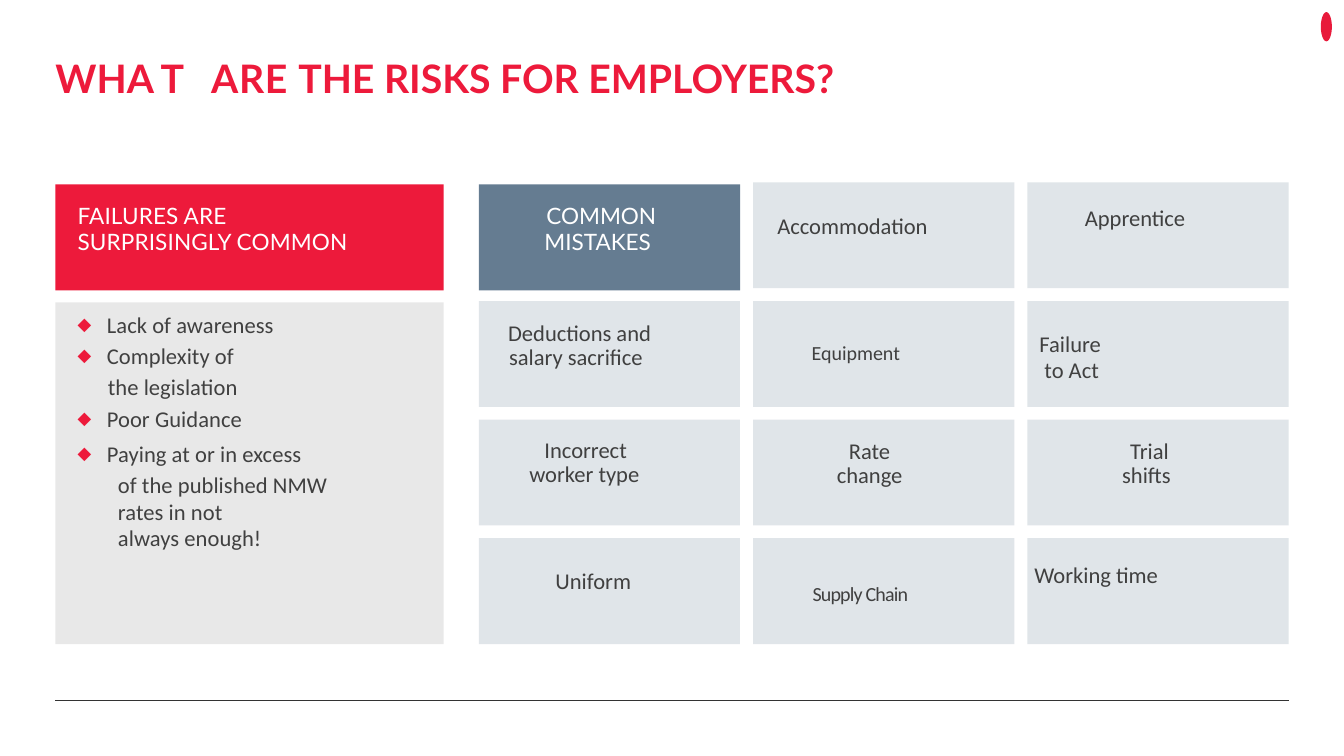
from dataclasses import dataclass

from lxml.etree import SubElement
from pptx import Presentation
from pptx.dml.color import RGBColor
from pptx.enum.shapes import MSO_CONNECTOR as Connector, MSO_SHAPE as Preset
from pptx.enum.text import MSO_ANCHOR as Anchor, MSO_AUTO_SIZE as AutoSize, PP_ALIGN as Align
from pptx.oxml.ns import qn
from pptx.util import Inches, Pt

RED, SLATE, PALE, GREY = "ED1A3B", "657C91", "E0E5E9", "E8E8E8"
WHITE, INK, RULE = "FFFFFF", "404040", "333333"

LEFT, RIGHT, BOTTOM = 0.55, 12.78, 6.39
PANEL_W, HEADER_TOP, LIST_TOP = 3.85, 1.83, 3.0
GRID_LEFT, GRID_TOP, CELL_W, CELL_H = 4.75, 1.81, 2.59, 1.05
COLUMN_STEP = (RIGHT - GRID_LEFT - CELL_W) / 2
ROW_STEP = (BOTTOM - GRID_TOP - CELL_H) / 3


@dataclass(frozen=True)
class Mistake:
    """One grid cell; dx and dy place its text inside the cell, indents shift single lines."""
    column: int
    row: int
    lines: tuple[str, ...]
    dx: float
    dy: float
    indents: tuple[float, ...] = (0, 0)
    size: float = 16.1
    pitch: float = 17
    spacing: float = 0

    @property
    def left(self) -> float:
        return GRID_LEFT + self.column * COLUMN_STEP

    @property
    def top(self) -> float:
        return GRID_TOP + self.row * ROW_STEP


@dataclass(frozen=True)
class Reason:
    """One line of the list; lines without a bullet continue the one above."""
    words: str
    indent: float
    pitch: float = 22.4
    bullet: bool = True


MISTAKES = [
    Mistake(1, 0, ("Accommodation",), 0.24, 0.29),
    Mistake(2, 0, ("Apprentice",), 0.57, 0.21),
    Mistake(0, 1, ("Deductions and", "salary sacrifice"), 0.29, 0.18, (0, 0.01)),
    Mistake(1, 1, ("Equipment",), 0.58, 0.39, size=14.3),
    Mistake(2, 1, ("Failure", "to Act"), 0.12, 0.29, (0, 0.05), pitch=18.6),
    Mistake(0, 2, ("Incorrect", "worker type"), 0.5, 0.16, (0.15, 0)),
    Mistake(1, 2, ("Rate", "change"), 0.83, 0.17, (0.12, 0)),
    Mistake(2, 2, ("Trial", "shifts"), 0.94, 0.17, (0.08, 0)),
    Mistake(0, 3, ("Uniform",), 0.76, 0.29),
    Mistake(1, 3, ("Supply Chain",), 0.59, 0.43, size=14.3, spacing=-0.6),
    Mistake(2, 3, ("Working time",), 0.07, 0.23),
]

REASONS = [
    Reason("Lack of awareness", 0.29),
    Reason("Complexity of", 0.29),
    Reason("the legislation", 0.3, bullet=False),
    Reason("Poor Guidance", 0.29),
    Reason("Paying at or in excess", 0.29, pitch=25),
    Reason("of the published NMW", 0.4, bullet=False),
    Reason("rates in not", 0.4, pitch=19, bullet=False),
    Reason("always enough!", 0.4, pitch=19, bullet=False),
]


def colour(code: str) -> RGBColor:
    return RGBColor.from_string(code)


def place(shape, left: float, top: float, width: float, height: float) -> None:
    shape.left, shape.top = Inches(left), Inches(top)
    shape.width, shape.height = Inches(width), Inches(height)


def clear_frame(shape):
    """Strip margins and fitting from a shape's text frame and return the frame."""
    frame = shape.text_frame
    frame.margin_left = frame.margin_right = frame.margin_top = frame.margin_bottom = 0
    frame.word_wrap = True
    frame.auto_size = AutoSize.NONE
    frame.vertical_anchor = Anchor.TOP
    return frame


def line_of(frame, index: int):
    return frame.paragraphs[0] if index == 0 else frame.add_paragraph()


def write(paragraph, words: str, *, font: str = "Calibri", size: float = 16.1,
          code: str = INK, bold: bool = False, spacing: float = 0) -> None:
    run = paragraph.add_run()
    run.text = words
    run.font.name, run.font.size, run.font.bold = font, Pt(size), bold
    run.font.color.rgb = colour(code)
    if spacing:
        run.font._element.set("spc", str(round(spacing * 100)))


def set_indent(paragraph, margin: float, hanging: float = 0):
    properties = paragraph._p.get_or_add_pPr()
    properties.set("marL", str(Inches(margin)))
    properties.set("indent", str(-Inches(hanging)))
    return properties


def paint(shape, fill: str) -> None:
    shape.shadow.inherit = False
    shape.fill.solid()
    shape.fill.fore_color.rgb = colour(fill)
    shape.line.fill.background()


def add_block(slide, left: float, top: float, width: float, height: float,
              fill: str, preset=Preset.RECTANGLE):
    block = slide.shapes.add_shape(preset, 0, 0, 0, 0)
    place(block, left, top, width, height)
    paint(block, fill)
    return block


def add_label(slide, left: float, top: float, lines: tuple[str, ...], *,
              indents: tuple[float, ...] = (0, 0), pitch: float = 19.1,
              width: float = 2, **style) -> None:
    label = slide.shapes.add_textbox(0, 0, 0, 0)
    place(label, left, top, width, 0.27 * len(lines))
    frame = clear_frame(label)
    for index, words in enumerate(lines):
        paragraph = line_of(frame, index)
        set_indent(paragraph, indents[index])
        if index:
            paragraph.line_spacing = Pt(pitch)
        write(paragraph, words, **style)


def add_mistake_grid(slide) -> None:
    """Draw all cells as one outline, then the text of each."""
    first = MISTAKES[0]
    outline = slide.shapes.build_freeform(Inches(first.left), Inches(first.top))
    for mistake in MISTAKES:
        left, top = Inches(mistake.left), Inches(mistake.top)
        right, bottom = left + Inches(CELL_W), top + Inches(CELL_H)
        if mistake is not first:
            outline.move_to(left, top)
        outline.add_line_segments([(right, top), (right, bottom), (left, bottom)], close=True)
    paint(outline.convert_to_shape(), PALE)
    for mistake in MISTAKES:
        add_label(slide, mistake.left + mistake.dx, mistake.top + mistake.dy, mistake.lines,
                  indents=mistake.indents, pitch=mistake.pitch,
                  size=mistake.size, spacing=mistake.spacing)


def fill_title(title) -> None:
    place(title, LEFT, 0.63, RIGHT - LEFT, 0.35)
    heading = clear_frame(title).paragraphs[0]
    heading.alignment, heading.line_spacing = Align.LEFT, 0.8
    for words, spacing in (("WH", 0), ("AT ", 6.7), ("ARE ", 0.5), ("THE RISKS FOR EMPLOYERS?", 0)):
        write(heading, words, font="Lato", size=28, code=RED, bold=True, spacing=spacing)


def fill_reasons(body) -> None:
    place(body, 0.77, 3.04, 3.4, 2.5)
    frame = clear_frame(body)
    for index, reason in enumerate(REASONS):
        paragraph = line_of(frame, index)
        properties = set_indent(paragraph, reason.indent, reason.indent if reason.bullet else 0)
        paragraph.line_spacing, paragraph.space_before = Pt(reason.pitch), Pt(0)
        if reason.bullet:
            SubElement(SubElement(properties, qn("a:buClr")), qn("a:srgbClr"), val=RED)
            SubElement(properties, qn("a:buSzPct"), val="79000")
            SubElement(properties, qn("a:buFont"), typeface="Roboto")
            SubElement(properties, qn("a:buChar"), char="◆")
        else:
            SubElement(properties, qn("a:buNone"))
        write(paragraph, reason.words, spacing=0.05)


def add_footer_rule(slide) -> None:
    rule = slide.shapes.add_connector(Connector.STRAIGHT, Inches(LEFT), Inches(6.95),
                                      Inches(RIGHT), Inches(6.95))
    rule.line.color.rgb, rule.line.width = colour(RULE), Pt(0.5)
    SubElement(rule._element.spPr, qn("a:effectLst"))


def main() -> None:
    deck = Presentation()
    deck.slide_width, deck.slide_height = Inches(13.33), Inches(7.5)
    slide = deck.slides.add_slide(deck.slide_layouts[1])
    title, body = slide.placeholders
    fill_title(title)
    add_footer_rule(slide)
    add_block(slide, LEFT, HEADER_TOP, PANEL_W, CELL_H, RED)
    add_label(slide, 0.77, 2, ("FAILURES ARE", "SURPRISINGLY COMMON"),
              width=3.57, font="Lato", code=WHITE, spacing=0.12)
    list_panel = add_block(slide, LEFT, LIST_TOP, PANEL_W, BOTTOM - LIST_TOP, GREY)
    list_panel._element.addnext(body._element)
    fill_reasons(body)
    add_block(slide, GRID_LEFT, HEADER_TOP, CELL_W, CELL_H, SLATE)
    add_label(slide, 5.4, 2, ("COMMON", "MISTAKES"), indents=(0.02, 0), font="Lato", code=WHITE)
    add_mistake_grid(slide)
    add_block(slide, 13.1, 0.12, 0.11, 0.29, "E81A3B", Preset.OVAL)
    deck.save("out.pptx")


if __name__ == "__main__":
    main()
